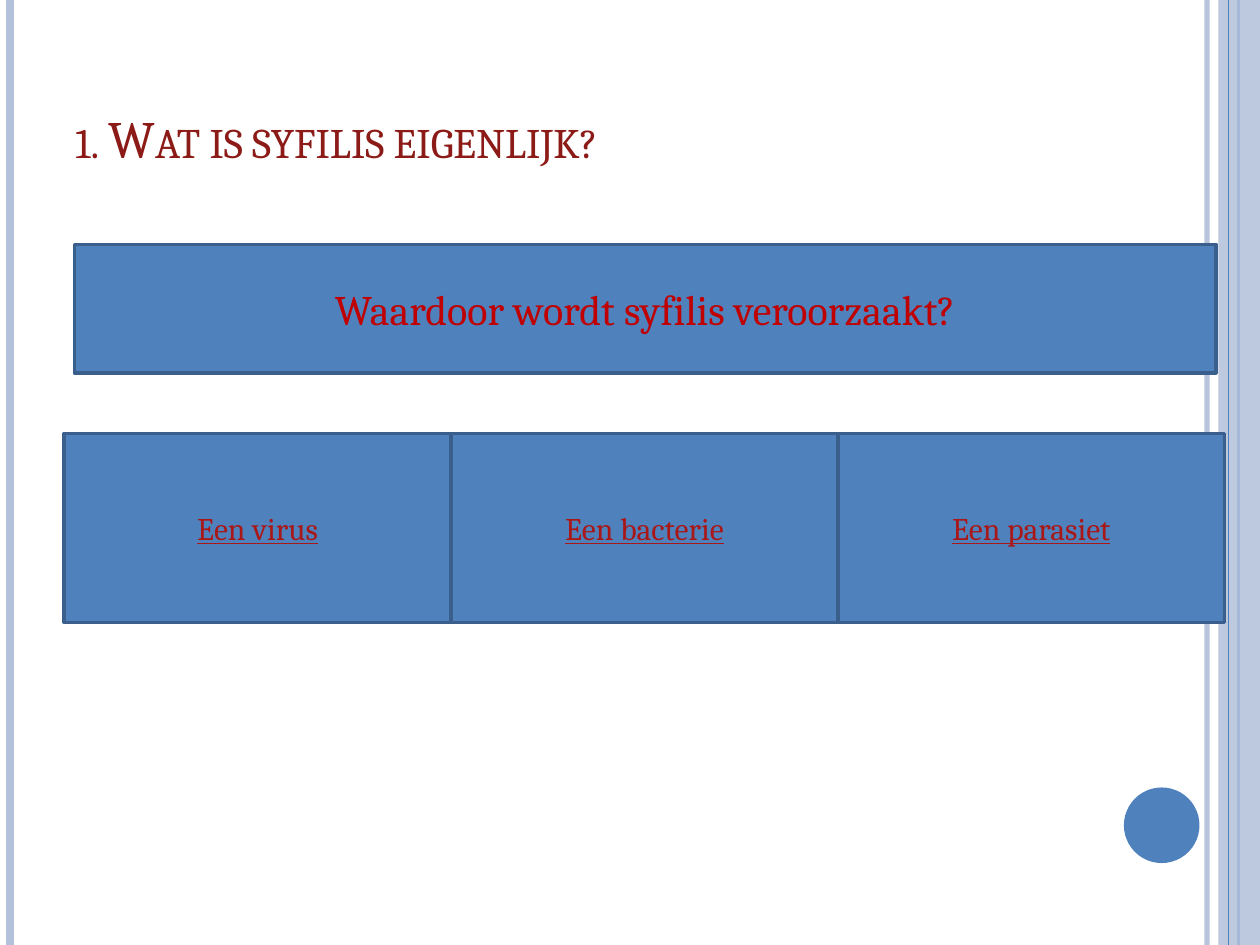
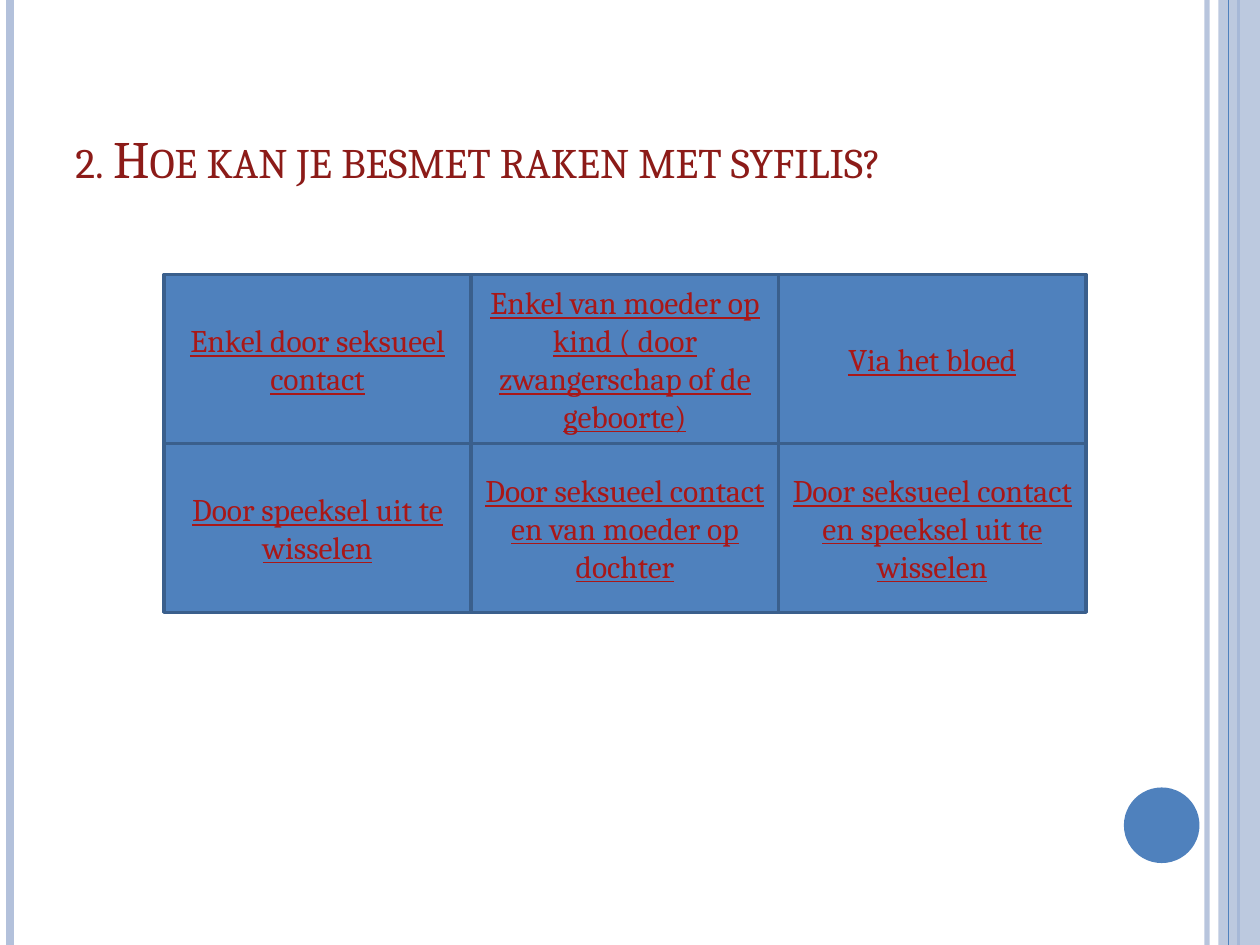
from dataclasses import dataclass

from lxml.etree import SubElement
from pptx import Presentation
from pptx.dml.color import RGBColor
from pptx.enum.shapes import MSO_CONNECTOR, MSO_SHAPE as Preset
from pptx.enum.text import MSO_ANCHOR as Anchor, PP_ALIGN as Align
from pptx.oxml.ns import qn
from pptx.util import Inches, Pt


@dataclass(frozen=True)
class Theme:
    """Colours, font and type sizes of the quiz."""
    font: str = "Cambria"
    blue: str = "4F81BD"
    pale: str = "B3C1DB"
    border: str = "3A5F8C"
    title: str = "8C1B18"
    question: str = "C00000"
    answer: str = "A91717"
    title_size: int = 30
    question_size: int = 24
    answer_size: int = 18
    border_width: int = 2


class Quiz:
    """Draws quiz slides in one theme."""

    def __init__(self, theme):
        """Start an empty 10 by 7.5 inch presentation."""
        self.theme = theme
        self.deck = Presentation()
        self.deck.slide_width, self.deck.slide_height = Inches(10), Inches(7.5)
        self.slide = None

    def paint(self, fill, colour, opacity=100):
        """Set a solid colour with an opacity in percent."""
        fill.solid()
        fill.fore_color.rgb = RGBColor.from_string(colour)
        if opacity < 100:
            colour_xml = fill._xPr.find(qn("a:solidFill"))[0]
            SubElement(colour_xml, qn("a:alpha")).set("val", str(opacity * 1000))

    def stripe(self, x, colour, width, opacity=100):
        """Draw a vertical line over the full slide height."""
        line = self.slide.shapes.add_connector(
            MSO_CONNECTOR.STRAIGHT, Inches(x), 0, Inches(x), self.deck.slide_height)
        line.line.width = Pt(width)
        self.paint(line.line.fill, colour, opacity)
        SubElement(line._element.spPr, qn("a:effectLst"))

    def shape(self, preset, left, top, width, height, colour, opacity=100):
        """Draw a filled shape without border or shadow."""
        shape = self.slide.shapes.add_shape(
            preset, Inches(left), Inches(top), Inches(width), Inches(height))
        shape.shadow.inherit = False
        self.paint(shape.fill, colour, opacity)
        shape.line.fill.background()
        return shape

    def set_text(self, frame, text, size, colour, align, anchor):
        """Fill a text frame and return its run font."""
        frame.word_wrap = True
        frame.vertical_anchor = anchor
        frame.text = text
        paragraph = frame.paragraphs[0]
        paragraph.alignment = align
        font = paragraph.runs[0].font
        font.name, font.size = self.theme.font, Pt(size)
        font.color.rgb = RGBColor.from_string(colour)
        return font

    def box(self, text, left, top, width, height, size, colour):
        """Draw a bordered box with centred text and return its font."""
        box = self.shape(Preset.RECTANGLE, left, top, width, height, self.theme.blue)
        self.paint(box.line.fill, self.theme.border)
        box.line.width = Pt(self.theme.border_width)
        return self.set_text(box.text_frame, text, size, colour, Align.CENTER, Anchor.MIDDLE)

    def start(self, title, width, height):
        """Add a slide with the shared decoration and a title."""
        theme = self.theme
        self.slide = self.deck.slides.add_slide(self.deck.slide_layouts[6])
        self.stripe(9.58, theme.pale, 3, 93)
        self.stripe(0.08, theme.pale, 4.5)
        self.stripe(9.83, theme.blue, 1.5)
        self.shape(Preset.RECTANGLE, 9.67, 0, 0.33, 7.5, theme.pale, 87)
        self.stripe(9.75, theme.blue, 0.75)
        self.shape(Preset.OVAL, 8.92, 6.25, 0.6, 0.6, theme.blue)
        heading = self.slide.shapes.add_textbox(
            Inches(0.5), Inches(0.3), Inches(width), Inches(height))
        font = self.set_text(heading.text_frame, title, theme.title_size, theme.title,
                             Align.LEFT, Anchor.BOTTOM)
        font._element.set("cap", "small")

    def question(self, text, left, top, width, height):
        """Draw the question bar."""
        self.box(text, left, top, width, height, self.theme.question_size, self.theme.question)

    def answers(self, rows, left, top, width, height):
        """Draw adjoining answer boxes in a grid."""
        for row, texts in enumerate(rows):
            for column, text in enumerate(texts):
                font = self.box(text, left + column * width, top + row * height, width, height,
                                self.theme.answer_size, self.theme.answer)
                font.underline = True


def main():
    """Build both quiz slides."""
    quiz = Quiz(Theme())

    quiz.start("1. Wat is syfilis eigenlijk?", 9, 1.09)
    quiz.answers([["Een virus", "Een bacterie", "Een parasiet"]], 0.51, 3.44, 3.07, 1.5)
    quiz.question("Waardoor wordt syfilis veroorzaakt?", 0.59, 1.94, 9.06, 1.02)

    quiz.start("2. Hoe kan je besmet raken met syfilis?", 8.17, 1.25)
    quiz.answers([
        ["Enkel door seksueel contact",
         "Enkel van moeder op kind ( door zwangerschap of de geboorte)",
         "Via het bloed"],
        ["Door speeksel uit te wisselen",
         "Door seksueel contact en van moeder op dochter",
         "Door seksueel contact en speeksel uit te wisselen"],
    ], 1.3, 2.18, 2.44, 1.34)

    quiz.deck.save("out.pptx")


if __name__ == "__main__":
    main()
